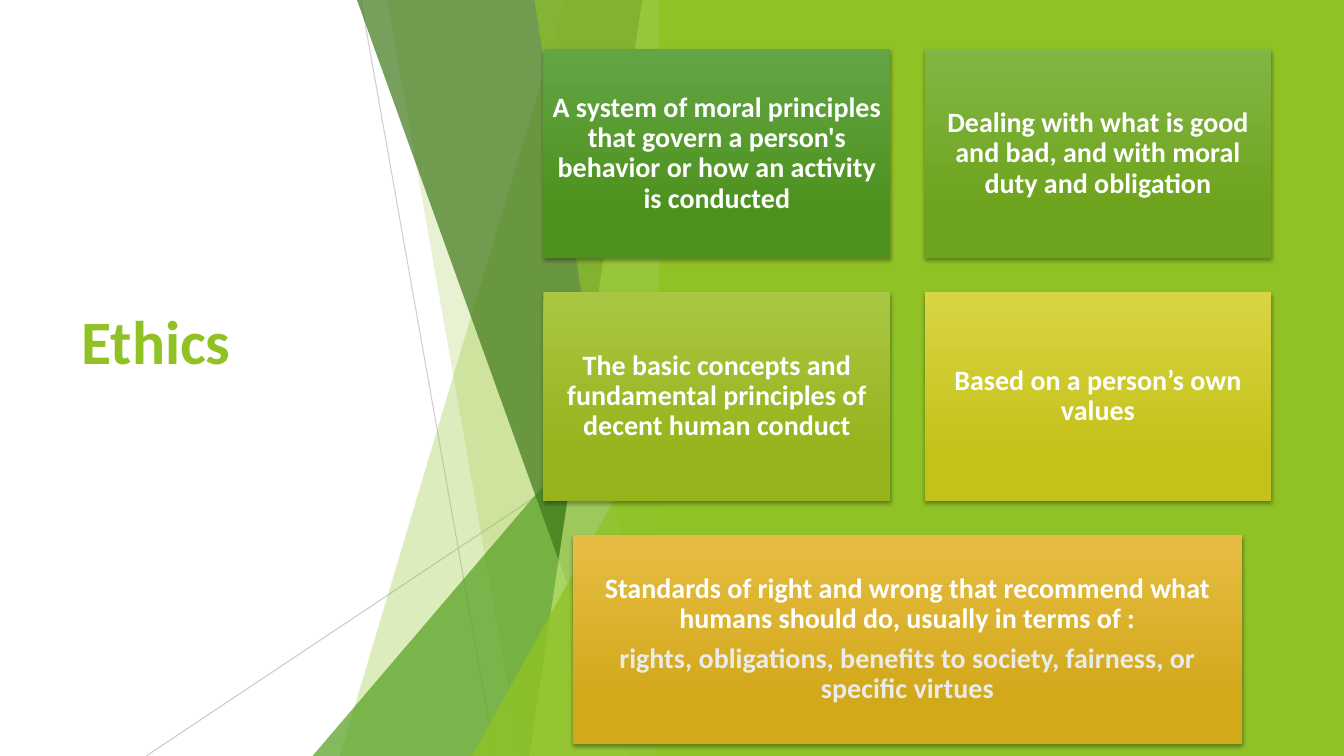
from lxml.etree import SubElement
from pptx import Presentation
from pptx.dml.color import RGBColor
from pptx.enum.shapes import MSO_CONNECTOR as CONN, MSO_SHAPE as SHAPE
from pptx.enum.text import MSO_ANCHOR as ANCHOR, PP_ALIGN as ALIGN
from pptx.oxml.ns import qn
from pptx.util import Inches, Pt

WHITE = RGBColor(0xFF, 0xFF, 0xFF)
PALE = RGBColor(0xEB, 0xEB, 0xEB)
GREY = RGBColor(0xBF, 0xBF, 0xBF)
LIME = RGBColor(0x90, 0xC2, 0x26)
LIGHT_LIME = RGBColor(0xC0, 0xE4, 0x74)
GREEN = RGBColor(0x54, 0xA0, 0x21)
DARK_GREEN = RGBColor(0x3F, 0x78, 0x19)
CARD_GRADIENTS = [
    (RGBColor(0x63, 0xA5, 0x45), RGBColor(0x4D, 0x92, 0x1E)),
    (RGBColor(0x82, 0xB6, 0x44), RGBColor(0x6E, 0xA3, 0x1D)),
    (RGBColor(0xAA, 0xC7, 0x44), RGBColor(0x97, 0xB3, 0x1C)),
    (RGBColor(0xD8, 0xD5, 0x43), RGBColor(0xC4, 0xC1, 0x1A)),
    (RGBColor(0xE7, 0xBC, 0x43), RGBColor(0xD2, 0xA9, 0x1B)),
]

WIDTH, HEIGHT = 13.33, 7.5
FACET_RIGHT = 6.66
CARD_W, CARD_H, CARD_GAP = 3.44, 2.07, 0.34
CARD_LEFT, CARD_TOP = 5.39, 0.49
WIDE_CARD_W = 6.64


def add_text(tf, text, first=False, size=20, color=WHITE, align=ALIGN.CENTER,
             spacing=0.9, after=7):
    p = tf.paragraphs[0] if first else tf.add_paragraph()
    p.alignment, p.line_spacing, p.space_after = align, spacing, Pt(after)
    r = p.add_run()
    r.text = text
    r.font.name, r.font.size, r.font.bold = "Calibri", Pt(size), True
    r.font.color.rgb = color


def set_alpha(element, percent):
    for color in element.iter(qn("a:srgbClr")):
        SubElement(color, qn("a:alpha"), val=str(percent * 1000))


class SlideBuilder:
    def __init__(self, slide):
        self.shapes = slide.shapes

    def fill(self, sp, color, alpha=100):
        sp.shadow.inherit = False
        sp.fill.solid()
        sp.fill.fore_color.rgb = color
        sp.line.fill.background()
        if alpha < 100:
            set_alpha(sp.fill._xPr, alpha)

    def line(self, x1, y1, x2, y2, alpha):
        sp = self.shapes.add_connector(
            CONN.STRAIGHT, Inches(x1), Inches(y1), Inches(x2), Inches(y2))
        sp.line.width = Pt(0.75)
        sp.line.color.rgb = GREY
        set_alpha(sp.line._ln, alpha)
        SubElement(sp._element.spPr, qn("a:effectLst"))

    def facet(self, top_x, bottom_x, color, alpha):
        corners = [(FACET_RIGHT, 0), (FACET_RIGHT, HEIGHT), (bottom_x, HEIGHT)]
        outline = self.shapes.build_freeform(Inches(top_x), 0, scale=1.0)
        outline.add_line_segments([(Inches(x), Inches(y)) for x, y in corners])
        self.fill(outline.convert_to_shape(), color, alpha)

    def triangle(self, left, top, color, alpha):
        sp = self.shapes.add_shape(
            SHAPE.ISOSCELES_TRIANGLE, Inches(left), Inches(top),
            Inches(FACET_RIGHT - left), Inches(HEIGHT - top))
        sp.adjustments[0] = 1
        self.fill(sp, color, alpha)

    def panel(self, left, color):
        sp = self.shapes.add_shape(SHAPE.RECTANGLE, Inches(left), 0,
                                   Inches(WIDTH - left), Inches(HEIGHT))
        self.fill(sp, color)

    def title(self, text):
        sp = self.shapes.add_textbox(Inches(0.71), Inches(1.51), Inches(3.88), Inches(4.48))
        tf = sp.text_frame
        tf.word_wrap = True
        tf.vertical_anchor = ANCHOR.MIDDLE
        tf.margin_bottom = Inches(0.8)  # lifts the title above the middle
        add_text(tf, text, first=True, size=44, color=LIME, align=ALIGN.LEFT,
                 spacing=1.0, after=0)

    def card(self, left, top, width, gradient, texts):
        sp = self.shapes.add_shape(SHAPE.RECTANGLE, Inches(left), Inches(top),
                                   Inches(width), Inches(CARD_H))
        sp.fill.gradient()
        sp.fill.gradient_angle = 270
        for stop, position, color in zip(sp.fill.gradient_stops, (0, 0.78), gradient):
            stop.position = position
            stop.color.rgb = color
        sp.line.fill.background()
        self.drop_shadow(sp)
        tf = sp.text_frame
        tf.word_wrap = True
        tf.vertical_anchor = ANCHOR.MIDDLE
        tf.margin_left = tf.margin_right = Inches(0.08)
        tf.margin_top = tf.margin_bottom = Inches(0.08)
        for i, text in enumerate(texts):
            add_text(tf, text, first=i == 0, color=PALE if i else WHITE)

    def drop_shadow(self, sp):
        sp.shadow.inherit = False
        effects = sp._element.spPr.find(qn("a:effectLst"))
        shadow = SubElement(effects, qn("a:outerShdw"), blurRad=str(Pt(3)),
                            dist=str(Pt(2)), dir="5400000", rotWithShape="0")
        SubElement(shadow, qn("a:srgbClr"), val="000000")
        set_alpha(shadow, 35)


def main():
    prs = Presentation()
    prs.slide_width, prs.slide_height = Inches(WIDTH), Inches(HEIGHT)
    s = SlideBuilder(prs.slides.add_slide(prs.slide_layouts[6]))

    s.title("Ethics")

    # Faceted backdrop, back to front
    s.line(3.58, 0, 4.91, HEIGHT, alpha=75)
    s.line(FACET_RIGHT, 4.03, 1.45, HEIGHT, alpha=80)
    s.facet(5.61, 3.37, LIME, 30)
    s.facet(3.84, 5.16, LIME, 20)
    s.triangle(3.1, 3.33, GREEN, 72)
    s.facet(3.54, 6.24, DARK_GREEN, 70)
    s.facet(6.37, 5.25, LIGHT_LIME, 70)
    s.facet(5.3, 6.51, LIME, 65)
    s.triangle(4.68, 3.93, LIME, 80)
    s.panel(6.54, LIME)

    # Two by two cards, then a wide one centred below
    definitions = [
        "A system of moral principles that govern a person's behavior "
        "or how an activity is conducted",
        "Dealing with what is good and bad, and with moral duty and obligation",
        "The basic concepts and fundamental principles of decent human conduct",
        "Based on a person’s own values",
    ]
    for i, text in enumerate(definitions):
        row, col = divmod(i, 2)
        s.card(CARD_LEFT + col * (CARD_W + CARD_GAP),
               CARD_TOP + row * (CARD_H + CARD_GAP),
               CARD_W, CARD_GRADIENTS[i], [text])
    grid_w = 2 * CARD_W + CARD_GAP
    s.card(CARD_LEFT + (grid_w - WIDE_CARD_W) / 2,
           CARD_TOP + 2 * (CARD_H + CARD_GAP),
           WIDE_CARD_W, CARD_GRADIENTS[4],
           ["Standards of right and wrong that recommend what humans should do, "
            "usually in terms of :",
            "rights, obligations, benefits to society, fairness, or specific virtues"])

    prs.save("out.pptx")


if __name__ == "__main__":
    main()
